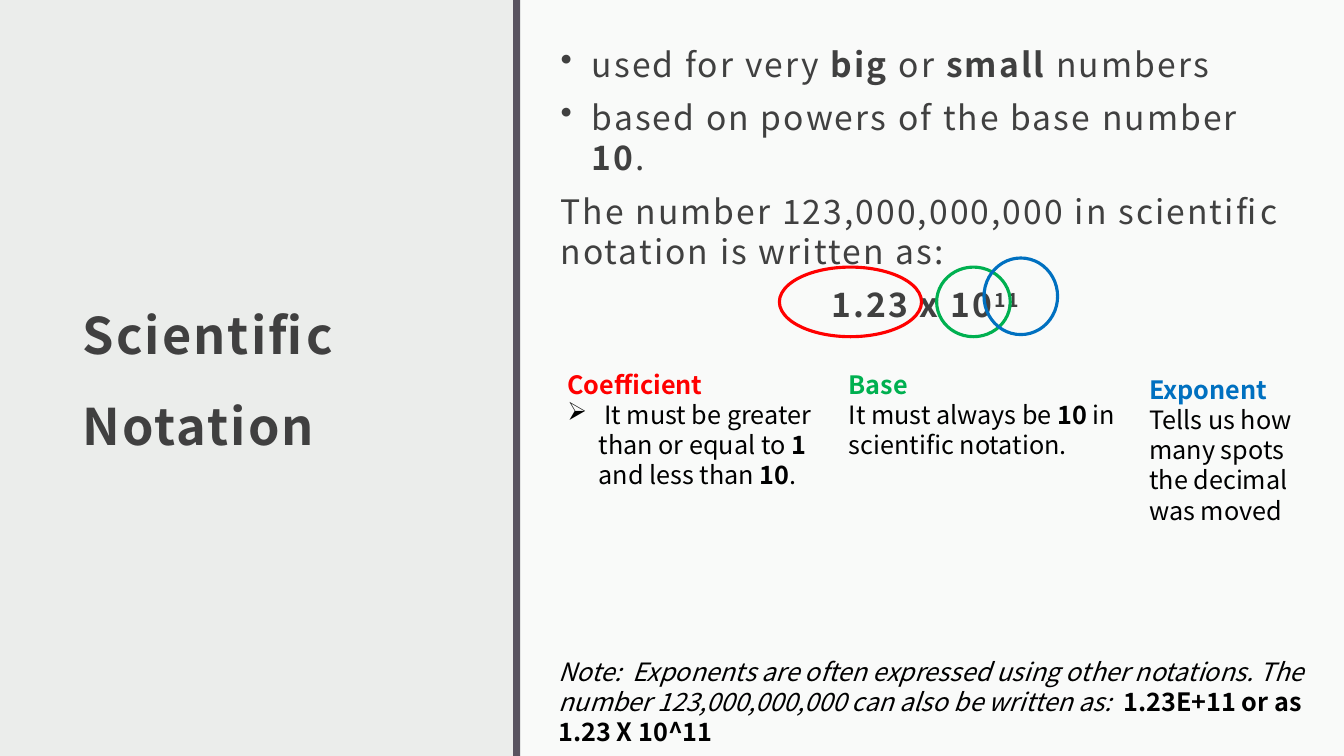
import dataclasses
import typing

import pptx
import pptx.dml.color
import pptx.enum.shapes
import pptx.enum.text
import pptx.oxml
import pptx.oxml.ns
import pptx.util

Inches, Pt = pptx.util.Inches, pptx.util.Pt
RGBColor = pptx.dml.color.RGBColor
MSO_SHAPE = pptx.enum.shapes.MSO_SHAPE
PP_ALIGN = pptx.enum.text.PP_ALIGN
MSO_ANCHOR = pptx.enum.text.MSO_ANCHOR

FONT = "Noto Sans CJK JP"
BACKGROUND = RGBColor(0xEB, 0xED, 0xEB)
WHITE = RGBColor(0xFF, 0xFF, 0xFF)
BLACK = RGBColor(0x00, 0x00, 0x00)
BAR = RGBColor(0x59, 0x54, 0x60)
DARK = RGBColor(0x40, 0x40, 0x40)
RED = RGBColor(0xFF, 0x00, 0x00)
GREEN = RGBColor(0x00, 0xB0, 0x50)
BLUE = RGBColor(0x00, 0x70, 0xC0)

INDENT = 0.31
PLACEHOLDER_INSETS = (0.12, 0.12, 0.12, 0.1)
Box = tuple[float, float, float, float]


class Run(typing.NamedTuple):
    text: str
    bold: bool = False
    italic: bool = False
    color: RGBColor | None = None
    baseline: int = 0


@dataclasses.dataclass
class Para:
    runs: list[Run]
    bullet: str = ""
    format: dict[str, typing.Any] = dataclasses.field(default_factory=dict)


@dataclasses.dataclass
class TextBox:
    box: Box
    paras: list[Para]
    size: float = 18
    color: RGBColor = BLACK
    spacing: float = 0
    insets: Box = (0.1, 0.05, 0.1, 0.05)
    anchor: MSO_ANCHOR = MSO_ANCHOR.TOP


class Part(typing.NamedTuple):
    name: str
    color: RGBColor
    ring: Box
    text_box: Box
    explanation: Para


def set_all(target: typing.Any, values: dict[str, typing.Any]) -> None:
    for name, value in values.items():
        setattr(target, name, value)


def add_bullet(p: typing.Any, char: str) -> None:
    pPr = p._p.get_or_add_pPr()
    pPr.set("marL", str(Inches(INDENT)))
    pPr.set("indent", str(-Inches(INDENT)))
    bu = pptx.oxml.parse_xml(f'<a:buChar {pptx.oxml.ns.nsdecls("a")} char="{char}"/>')
    pPr.append(bu)


def add_run(p: typing.Any, run: Run, tb: TextBox) -> None:
    r = p.add_run()
    r.text = run.text
    set_all(r.font, {"name": FONT, "size": Pt(tb.size),
                     "bold": run.bold, "italic": run.italic})
    r.font.color.rgb = run.color or tb.color
    rPr = r._r.get_or_add_rPr()
    if tb.spacing:
        rPr.set("spc", str(int(tb.spacing * 100)))
    if run.baseline:
        rPr.set("baseline", str(run.baseline * 1000))


def add_text(s: typing.Any, tb: TextBox) -> None:
    tf = s.shapes.add_textbox(*map(Inches, tb.box)).text_frame
    sides = ("margin_left", "margin_top", "margin_right", "margin_bottom")
    set_all(tf, {"word_wrap": True, "vertical_anchor": tb.anchor,
                 **dict(zip(sides, map(Inches, tb.insets)))})
    for i, para in enumerate(tb.paras):
        p = tf.add_paragraph() if i else tf.paragraphs[0]
        set_all(p, para.format)
        if para.bullet:
            add_bullet(p, para.bullet)
        for run in para.runs:
            add_run(p, run, tb)


def add_rect(s: typing.Any, box: Box, color: RGBColor, alpha: int = 100) -> None:
    sp = s.shapes.add_shape(MSO_SHAPE.RECTANGLE, *map(Inches, box))
    sp.shadow.inherit = False
    sp.fill.solid()
    sp.fill.fore_color.rgb = color
    sp.line.fill.background()
    if alpha < 100:
        clr = sp._element.spPr.find(".//" + pptx.oxml.ns.qn("a:srgbClr"))
        clr.append(pptx.oxml.parse_xml(
            f'<a:alpha {pptx.oxml.ns.nsdecls("a")} val="{alpha * 1000}"/>'))


def add_ring(s: typing.Any, box: Box, color: RGBColor) -> None:
    sp = s.shapes.add_shape(MSO_SHAPE.OVAL, *map(Inches, box))
    sp.shadow.inherit = False
    sp.fill.background()
    sp.line.color.rgb = color
    sp.line.width = Pt(2.25)


SPACED = {"space_before": Pt(9.3)}

TITLE = TextBox(
    (0.7, 0.77, 3.73, 5.68),
    [Para([Run("Scientific Notation", bold=True)], format={"line_spacing": 1.5})],
    size=36, color=DARK, spacing=1.5,
    insets=PLACEHOLDER_INSETS, anchor=MSO_ANCHOR.MIDDLE)

BODY = TextBox(
    (5.44, 0.41, 7.54, 3.34),
    [Para([Run("used for very "), Run("big", bold=True), Run(" or "),
           Run("small", bold=True), Run(" numbers")], "•", SPACED),
     Para([Run("based on powers of the base number "), Run("10", bold=True),
           Run(".")], "•", SPACED),
     Para([Run("The number 123,000,000,000 in scientific notation is "
               "written as:")], format=SPACED),
     Para([Run("1.23 x 10", bold=True), Run("11 ", bold=True, baseline=30)],
          format={**SPACED, "alignment": PP_ALIGN.CENTER})],
    size=24, color=DARK, spacing=1.5,
    insets=(0.12, 0.12, 0.12, 0.63), anchor=MSO_ANCHOR.MIDDLE)

PARTS = [
    Part("Coefficient", RED, (7.73, 2.65, 1.41, 0.69), (5.53, 3.61, 2.69, 1.92),
         Para([Run(" It must be greater than or equal to "), Run("1", bold=True),
               Run(" and less than "), Run("10", bold=True), Run(".")], "➢")),
    Part("Base", GREEN, (9.29, 2.65, 0.73, 0.69), (8.32, 3.61, 2.92, 1.62),
         Para([Run("It must always be "), Run("10", bold=True),
               Run(" in scientific notation.")])),
    Part("Exponent", BLUE, (9.76, 2.56, 0.73, 0.76), (11.3, 3.66, 1.91, 1.92),
         Para([Run("Tells us how many spots the decimal was moved")])),
]

NOTE = TextBox(
    (5.44, 6.46, 7.77, 1.04),
    [Para([Run("Note:  Exponents are often expressed using other notations. "
               "The number 123,000,000,000 can also be written as:  ", italic=True),
           Run("1.23E+11 or as 1.23 X 10^11", bold=True)])])


def main() -> None:
    prs = pptx.Presentation()
    set_all(prs, {"slide_width": Inches(13.33), "slide_height": Inches(7.5)})
    s = prs.slides.add_slide(prs.slide_layouts[6])

    # Background, content panel and divider
    s.background.fill.solid()
    s.background.fill.fore_color.rgb = BACKGROUND
    add_rect(s, (5.16, 0, 8.17, 7.5), WHITE, alpha=75)
    add_rect(s, (5.09, 0, 0.07, 7.5), BAR)

    # Title and main points
    add_text(s, TITLE)
    add_text(s, BODY)

    # Parts of the notation: explanation and ring
    for part in PARTS:
        heading = Para([Run(part.name, bold=True, color=part.color)])
        add_text(s, TextBox(part.text_box, [heading, part.explanation]))
        add_ring(s, part.ring, part.color)

    # Closing note
    add_text(s, NOTE)
    prs.save("out.pptx")


if __name__ == "__main__":
    main()
